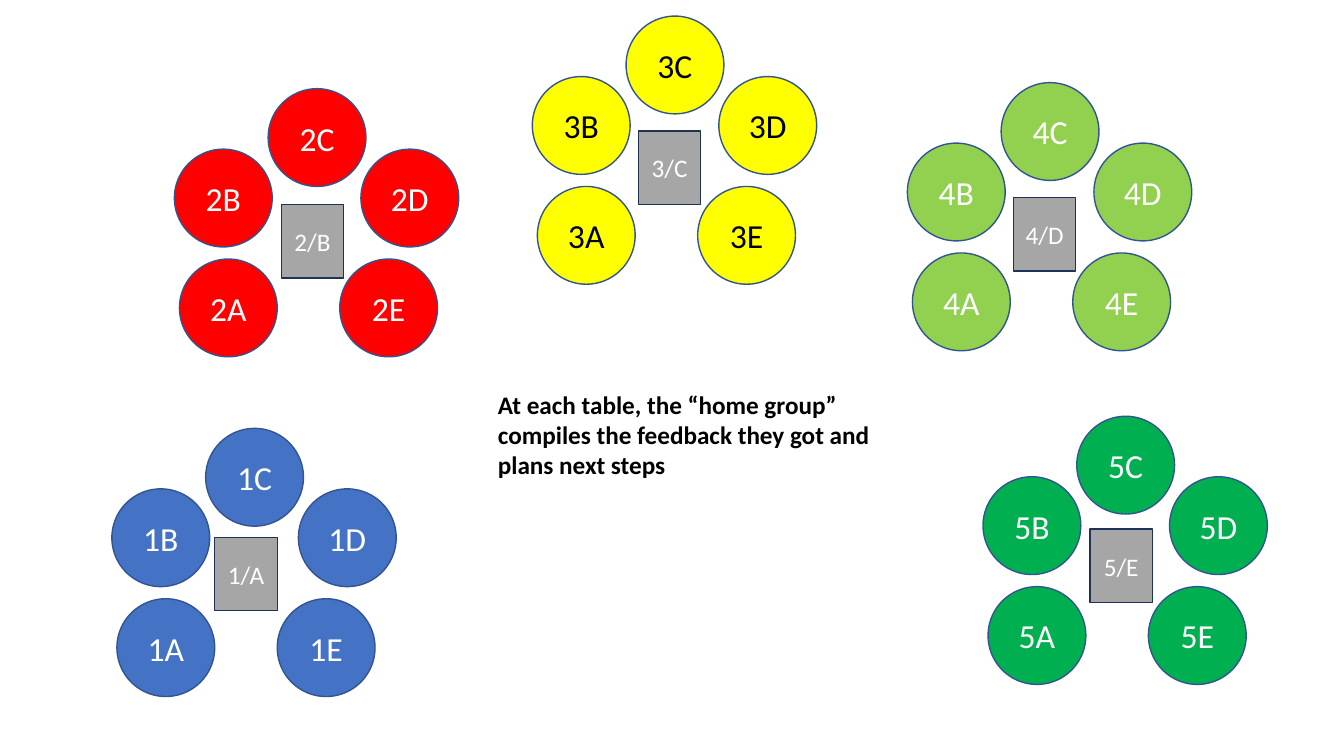
from pptx import Presentation
from pptx import util as u
from pptx.dml.color import RGBColor
from pptx.enum import shapes, text

FONT = "Calibri"
SEAT_SIZE = 0.97
SEATS = {"A": (0.05, 1.69), "E": (1.64, 1.69), "B": (0, 0.6), "C": (0.93, 0), "D": (1.85, 0.6)}
GROUPS = [
    ("1", "A", (1.11, 4.25), (2.13, 5.33), "4472C4", "FFFFFF"),
    ("3", "C", (5.28, 0.16), (6.33, 1.3), "FFFF00", "000000"),
    ("2", "B", (1.73, 0.88), (2.79, 2.03), "FF0000", "FFFFFF"),
    ("4", "D", (9, 0.82), (10.05, 1.96), "92D050", "FFFFFF"),
    ("5", "E", (9.75, 4.13), (10.81, 5.25), "00B050", "FFFFFF"),
]
NOTE = "At each table, the “home group” compiles the feedback they got and plans next steps"


def rgb(value):
    """Turn a hex string into a colour."""
    return RGBColor.from_string(value)


def write(sp, content, size, color, bold=False, align=text.PP_ALIGN.LEFT):
    """Put one formatted run into a shape."""
    tf = sp.text_frame
    tf.word_wrap = True
    p = tf.paragraphs[0]
    p.alignment = align
    r = p.add_run()
    r.text = content
    for key, value in {"name": FONT, "size": u.Pt(size), "bold": bold}.items():
        setattr(r.font, key, value)
    r.font.color.rgb = rgb(color)


def add_block(s, kind, box, label, size, fill, line, color):
    """Add a filled and outlined shape with a centred label."""
    sp = s.shapes.add_shape(kind, *map(u.Inches, box))
    sp.shadow.inherit = False
    sp.fill.solid()
    sp.fill.fore_color.rgb = rgb(fill)
    sp.line.color.rgb = rgb(line)
    sp.line.width = u.Pt(1)
    sp.text_frame.vertical_anchor = text.MSO_ANCHOR.MIDDLE
    write(sp, label, size, color, align=text.PP_ALIGN.CENTER)


def add_seats(s, number, origin, fill, color):
    """Add the five circular seats of one group."""
    for letter, (dx, dy) in SEATS.items():
        box = (origin[0] + dx, origin[1] + dy, SEAT_SIZE, SEAT_SIZE)
        add_block(s, shapes.MSO_SHAPE.OVAL, box, number + letter, 24, fill, "325491", color)


def add_table_card(s, label, corner):
    """Add the grey table in the middle of a group."""
    add_block(s, shapes.MSO_SHAPE.RECTANGLE, (*corner, 0.62, 0.73), label, 18,
              "A6A6A6", "1E3256", "FFFFFF")


def add_note(s, content, box):
    """Add the bold instruction text."""
    sp = s.shapes.add_textbox(*map(u.Inches, box))
    write(sp, content, 18, "000000", bold=True)
    sp.text_frame.auto_size = text.MSO_AUTO_SIZE.SHAPE_TO_FIT_TEXT


def main():
    """Build the seating slide and save it."""
    prs = Presentation()
    prs.slide_width, prs.slide_height = u.Inches(13.33), u.Inches(7.5)
    s = prs.slides.add_slide(prs.slide_layouts[6])
    for number, _, origin, _, fill, color in GROUPS:
        add_seats(s, number, origin, fill, color)
    for number, letter, _, corner, _, _ in sorted(GROUPS):
        add_table_card(s, f"{number}/{letter}", corner)
    add_note(s, NOTE, (4.84, 3.81, 4.24, 1.01))
    prs.save("out.pptx")


if __name__ == "__main__":
    main()
